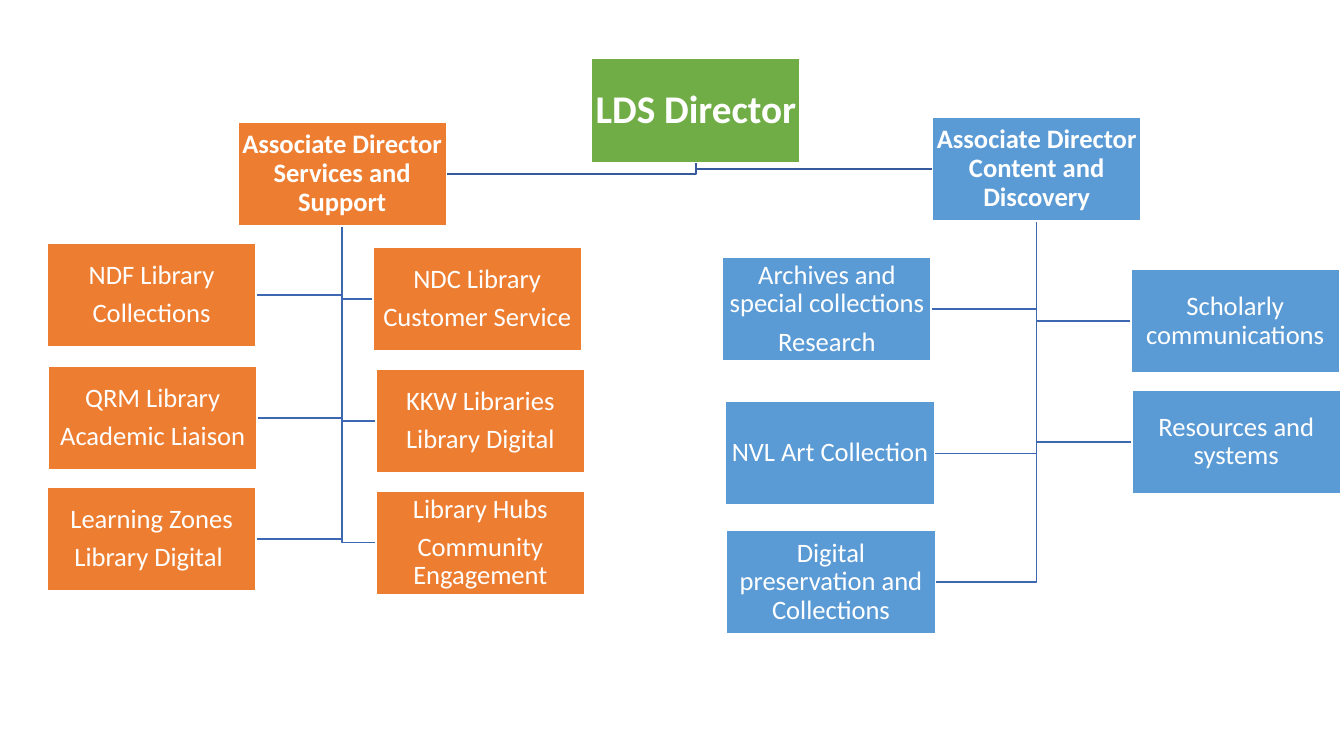
import pptx
import pptx.dml.color
import pptx.enum.shapes
import pptx.enum.text
import pptx.util
from pptx.util import Pt

BOX_WIDTH, BOX_HEIGHT = 149, 74.25
GREEN, ORANGE, BLUE = "70AD47", "ED7D31", "5B9BD5"
DIRECTOR_LINE, TEAM_LINE = "365B9D", "3E67B2"


def color(hex_value):
    return pptx.dml.color.RGBColor.from_string(hex_value)


class OrgChart:
    """Draws boxes and elbow links on one slide in a shared style."""

    font_name = "Calibri"
    text_color = "FFFFFF"
    line_width = 1

    def __init__(self, slide):
        self.slide = slide

    def link(self, parent, child, line_color):
        """Runs down from the parent's foot, then across to the child's near side."""
        trunk = parent[0] + BOX_WIDTH / 2
        foot = parent[1] + BOX_HEIGHT
        middle = child[1] + BOX_HEIGHT / 2
        side = child[0] if child[0] > trunk else child[0] + BOX_WIDTH
        builder = self.slide.shapes.build_freeform(Pt(trunk), Pt(foot))
        builder.add_line_segments(
            [(Pt(trunk), Pt(middle)), (Pt(side), Pt(middle))], close=False)
        elbow = builder.convert_to_shape()
        elbow.shadow.inherit = False
        elbow.fill.background()
        elbow.line.color.rgb = color(line_color)
        elbow.line.width = Pt(self.line_width)

    def box(self, place, lines, fill, size=19, bold=False, inset=0.9):
        left, top = place
        box = self.slide.shapes.add_shape(
            pptx.enum.shapes.MSO_SHAPE.RECTANGLE,
            Pt(left), Pt(top), Pt(BOX_WIDTH), Pt(BOX_HEIGHT))
        box.shadow.inherit = False
        box.fill.solid()
        box.fill.fore_color.rgb = color(fill)
        box.line.color.rgb = color("FFFFFF")
        box.line.width = Pt(self.line_width)

        frame = box.text_frame
        frame.word_wrap = True
        frame.vertical_anchor = pptx.enum.text.MSO_ANCHOR.MIDDLE
        frame.margin_left = frame.margin_right = Pt(inset)
        frame.margin_top = frame.margin_bottom = Pt(inset)
        for index, line in enumerate(lines):
            paragraph = frame.add_paragraph() if index else frame.paragraphs[0]
            paragraph.text = line
            paragraph.alignment = pptx.enum.text.PP_ALIGN.CENTER
            paragraph.line_spacing = 0.9
            paragraph.space_after = Pt(size * 0.35)
            paragraph.font.name = self.font_name
            paragraph.font.size = Pt(size)
            paragraph.font.bold = bold
            paragraph.font.color.rgb = color(self.text_color)


# Staff: place of each box and its lines of text
DIRECTOR = (422.6, 41.8)
BRANCHES = [
    ((169.9, 87.1), "Associate Director Services and Support", ORANGE, [
        ((33.8, 173.5), ["NDF Library", "Collections"]),
        ((266.4, 176.4), ["NDC Library", "Customer Service"]),
        ((34.6, 261.4), ["QRM Library", "Academic Liaison"]),
        ((268.6, 263.5), ["KKW Libraries", "Library Digital"]),
        ((268.6, 350.6), ["Library Hubs", "Community Engagement"]),
        ((33.8, 347.8), ["Learning Zones", "Library Digital "]),
    ]),
    ((666, 83.5), "Associate Director Content and Discovery", BLUE, [
        ((516.2, 183.6), ["Archives and special collections", "Research"]),
        ((808.6, 278.6), ["Resources and systems"]),
        ((807.8, 192.2), ["Scholarly communications"]),
        ((518.4, 286.6), ["NVL Art Collection"]),
        ((519.1, 378.7), ["Digital preservation and Collections"]),
    ]),
]


def main():
    presentation = pptx.Presentation()
    presentation.slide_width = Pt(960)
    presentation.slide_height = Pt(540)
    blank_layout = presentation.slide_layouts[6]
    chart = OrgChart(presentation.slides.add_slide(blank_layout))

    # Links, behind the boxes
    for associate, _, _, teams in BRANCHES:
        chart.link(DIRECTOR, associate, DIRECTOR_LINE)
        for team, _ in teams:
            chart.link(associate, team, TEAM_LINE)

    # Boxes
    chart.box(DIRECTOR, ["LDS Director"], GREEN, size=28, bold=True, inset=1.4)
    for associate, role, fill, teams in BRANCHES:
        chart.box(associate, [role], fill, bold=True)
        for team, lines in teams:
            chart.box(team, lines, fill)

    presentation.save("out.pptx")


if __name__ == "__main__":
    main()
